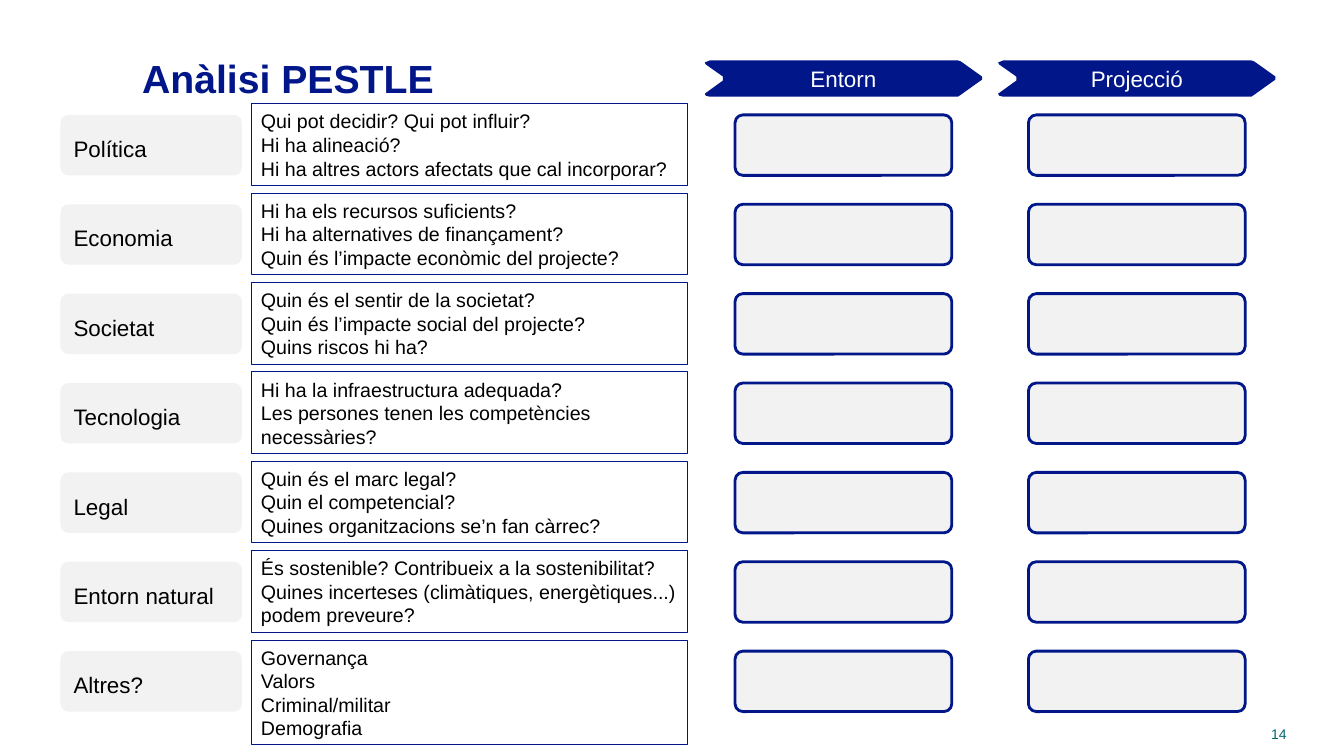
import pptx
import pptx.util
import pptx.dml.color
import pptx.enum.shapes
import pptx.enum.text
from dataclasses import dataclass

Inches = pptx.util.Inches
RGB = pptx.dml.color.RGBColor.from_string
SHAPE = pptx.enum.shapes.MSO_SHAPE
ALIGN = pptx.enum.text.PP_ALIGN
MIDDLE = pptx.enum.text.MSO_ANCHOR.MIDDLE


@dataclass(frozen=True)
class Theme:
    font: str = "Arial"
    navy: str = "001689"
    grey: str = "F2F2F2"
    teal: str = "00676C"
    black: str = "000000"
    white: str = "FFFFFF"
    title: int = 28
    label: int = 16
    body: int = 14
    number: int = 10


T = Theme()


def write(sp, lines, size, color, align=ALIGN.LEFT, bold=False, side=0.1, edge=0.05):
    """Fill a shape with paragraphs; side and edge are its insets in inches."""
    tf = sp.text_frame
    frame = {"word_wrap": True, "vertical_anchor": MIDDLE,
             "margin_left": Inches(side), "margin_right": Inches(side),
             "margin_top": Inches(edge), "margin_bottom": Inches(edge)}
    for name, value in frame.items():
        setattr(tf, name, value)
    tf.text = "\n".join(lines)
    for p in tf.paragraphs:
        p.alignment = align
        for r in p.runs:
            font = {"name": T.font, "size": pptx.util.Pt(size), "bold": bold}
            for name, value in font.items():
                setattr(r.font, name, value)
            r.font.color.rgb = RGB(color)


def add_box(kind, x, y, w, h, fill=None, line=None):
    """Add a preset shape; line is its width in points, None for no outline."""
    sp = s.shapes.add_shape(kind, Inches(x), Inches(y), Inches(w), Inches(h))
    sp.shadow.inherit = False
    if fill:
        sp.fill.solid()
        sp.fill.fore_color.rgb = RGB(fill)
    else:
        sp.fill.background()
    if line:
        sp.line.color.rgb = RGB(T.navy)
        sp.line.width = pptx.util.Pt(line)
    else:
        sp.line.fill.background()
    if kind == SHAPE.ROUNDED_RECTANGLE:
        sp.adjustments[0] = 0.13
    return sp


prs = pptx.Presentation()
prs.slide_width, prs.slide_height = Inches(13.33), Inches(7.5)
s = prs.slides.add_slide(prs.slide_layouts[5])

title = s.shapes.title
place = {"left": 1.31, "top": 0.46, "width": 10.88, "height": 0.62}
for name, value in place.items():
    setattr(title, name, Inches(value))
write(title, ["Anàlisi PESTLE"], T.title, T.navy, bold=True)

number = s.shapes.add_textbox(Inches(12.02), Inches(7.14), Inches(0.84), Inches(0.29))
write(number, ["14"], T.number, T.teal, ALIGN.RIGHT)

# Column headers: chevrons with softened corners
CHEVRON = [(0.01, 0.04), (0, 0.02), (0.05, 0), (2.51, 0), (2.54, 0.01),
           (2.75, 0.16), (2.75, 0.19), (2.54, 0.34), (2.51, 0.36),
           (0.05, 0.36), (0.01, 0.35), (0, 0.33), (0.18, 0.2), (0.18, 0.16)]
HEADER_TOP = 0.6
COLUMNS = [("Entorn", 6.99), ("Projecció", 9.9)]
for text, left in COLUMNS:
    points = [(Inches(left + x), Inches(HEADER_TOP + y)) for x, y in CHEVRON]
    outline = s.shapes.build_freeform(*points[0])
    outline.add_line_segments(points[1:], close=True)
    header = outline.convert_to_shape()
    header.shadow.inherit = False
    header.fill.solid()
    header.fill.fore_color.rgb = RGB(T.navy)
    header.line.fill.background()
    write(header, [text], T.label, T.white, ALIGN.CENTER, side=0.02, edge=0.02)

FACTORS = [
    ("Política", ["Qui pot decidir? Qui pot influir?",
                  "Hi ha alineació?",
                  "Hi ha altres actors afectats que cal incorporar?"]),
    ("Economia", ["Hi ha els recursos suficients?",
                  "Hi ha alternatives de finançament?",
                  "Quin és l’impacte econòmic del projecte?"]),
    ("Societat", ["Quin és el sentir de la societat?",
                  "Quin és l’impacte social del projecte?",
                  "Quins riscos hi ha?"]),
    ("Tecnologia", ["Hi ha la infraestructura adequada?",
                    "Les persones tenen les competències necessàries?"]),
    ("Legal", ["Quin és el marc legal?",
               "Quin el competencial?",
               "Quines organitzacions se’n fan càrrec?"]),
    ("Entorn natural", ["És sostenible? Contribueix a la sostenibilitat?",
                        "Quines incerteses (climàtiques, energètiques...) podem preveure?"]),
    ("Altres?", ["Governança", "Valors", "Criminal/militar", "Demografia"]),
]
FIRST_TOP, LAST_TOP = 1.14, 6.46
ROW_STEP = (LAST_TOP - FIRST_TOP) / (len(FACTORS) - 1)
for i, (factor, questions) in enumerate(FACTORS):
    top = FIRST_TOP + i * ROW_STEP
    add_box(SHAPE.ROUNDED_RECTANGLE, 0.6, top, 1.8, 0.6, fill=T.grey)
    label = s.shapes.add_textbox(Inches(0.71), Inches(top + 0.18), Inches(1.7), Inches(0.31))
    write(label, [factor], T.label, T.black, side=0.02, edge=0.02)
    for _, left in COLUMNS:
        add_box(SHAPE.ROUNDED_RECTANGLE, left + 0.3, top, 2.15, 0.6, fill=T.grey, line=2)
    height = 1.04 if len(questions) > 3 else 0.81
    card = add_box(SHAPE.RECTANGLE, 2.49, top - 0.11, 4.33, height, line=0.75)
    write(card, questions, T.body, T.black)

prs.save("out.pptx")
